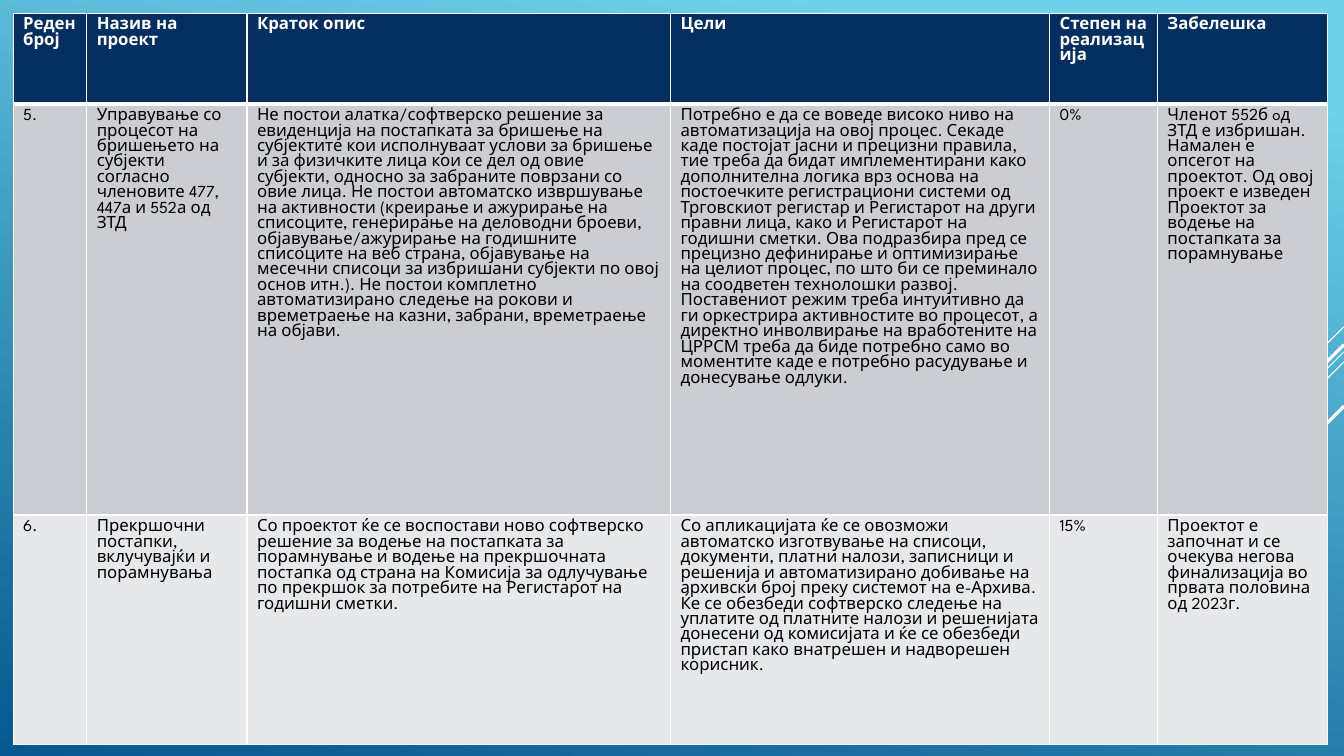
import pptx
import pptx.util
import pptx.dml.color
import pptx.enum.shapes
import pptx.oxml
import pptx.oxml.ns
from dataclasses import dataclass
from lxml import etree


@dataclass(frozen=True)
class Theme:
    font: str = "League Spartan"
    size: int = 12
    white: str = "FFFFFF"
    black: str = "000000"
    header: str = "052F61"
    bands: tuple = ("CCCDD2", "E7E8EA")
    sky: tuple = ((0.1, "6ED2EB"), (1.0, "06588E"))
    sky_angle: int = 258
    border: float = 1
    header_border: float = 3


THEME = Theme()
WIDTH = pptx.util.Inches(13.33)
HEIGHT = pptx.util.Inches(7.5)
GRID_COLUMNS, GRID_ROWS = 1333, 750

TABLE_LEFT, TABLE_TOP = 13, 13
TABLE_COLUMNS = (73, 159, 420, 376, 107, 169)
TABLE_ROWS = (90, 408, 228)

DIAGONALS = (
    (324, 100, 0.75),
    (349, 326, 0.75),
    (359, 207, 0.75),
    (342, 191, 2.25),
    (403, 139, 2.25),
)

HEADINGS = ("Реден број", "Назив на проект", "Краток опис", "Цели",
            "Степен на реализација", "Забелешка")

PROJECTS = (
    (
        "5.",
        "Управување со процесот на бришењето на субјекти согласно членовите 477, 447а и 552а од ЗТД",
        "Не постои алатка/софтверско решение за евиденција на постапката за бришење на субјектите "
        "кои исполнуваат услови за бришење и за физичките лица кои се дел од овие субјекти, односно "
        "за забраните поврзани со овие лица. Не постои автоматско извршување на активности (креирање "
        "и ажурирање на списоците, генерирање на деловодни броеви, објавување/ажурирање на годишните "
        "списоците на веб страна, објавување на месечни списоци за избришани субјекти по овој основ "
        "итн.). Не постои комплетно автоматизирано следење на рокови и времетраење на казни, забрани, "
        "времетраење на објави.",
        "Потребно е да се воведе високо ниво на автоматизација на овој процес. Секаде каде постојат "
        "јасни и прецизни правила, тие треба да бидат имплементирани како дополнителна логика врз "
        "основа на постоечките регистрациони системи од Трговскиот регистар и Регистарот на други "
        "правни лица, како и Регистарот на годишни сметки. Ова подразбира пред се прецизно дефинирање "
        "и оптимизирање на целиот процес, по што би се преминало на соодветен технолошки развој. "
        "Поставениот режим треба интуитивно да ги оркестрира активностите во процесот, а директно "
        "инволвирање на вработените на ЦРРСМ треба да биде потребно само во моментите каде е потребно "
        "расудување и донесување одлуки.",
        "0%",
        "Членот 552б oд ЗТД е избришан. Намален е опсегот на проектот. Од овој проект е изведен "
        "Проектот за водење на постапката за порамнување",
    ),
    (
        "6.",
        "Прекршочни постапки, вклучувајќи и порамнувања",
        "Со проектот ќе се воспостави ново софтверско решение за водење на постапката за порамнување "
        "и водење на прекршочната постапка од страна на Комисија за одлучување по прекршок за "
        "потребите на Регистарот на годишни сметки.",
        "Со апликацијата ќе се овозможи автоматско изготвување на списоци, документи, платни налози, "
        "записници и решенија и автоматизирано добивање на архивски број преку системот на е-Архива. "
        "Ќе се обезбеди софтверско следење на уплатите од платните налози и решенијата донесени од "
        "комисијата и ќе се обезбеди пристап како внатрешен и надворешен корисник.",
        "15%",
        "Проектот е започнат и се очекува негова финализација во првата половина од 2023г.",
    ),
)


def columns(count):
    return round(WIDTH * count / GRID_COLUMNS)


def rows(count):
    return round(HEIGHT * count / GRID_ROWS)


def color(value):
    return pptx.dml.color.RGBColor.from_string(value)


def paint_background(page):
    fill = page.background.fill
    fill.gradient()
    fill.gradient_angle = THEME.sky_angle
    for stop, (position, shade) in zip(fill.gradient_stops, THEME.sky):
        stop.position = position
        stop.color.rgb = color(shade)


def add_diagonal(page, top, reach, weight):
    line = page.shapes.add_connector(
        pptx.enum.shapes.MSO_CONNECTOR.STRAIGHT,
        WIDTH, rows(top), columns(GRID_COLUMNS - reach), rows(top + reach))
    line.line.color.rgb = color(THEME.white)
    line.line.width = pptx.util.Pt(weight)
    etree.SubElement(line._element.spPr, pptx.oxml.ns.qn("a:effectLst"))


def add_border(cell, side, weight):
    properties = cell._tc.get_or_add_tcPr()
    edge = etree.SubElement(properties, pptx.oxml.ns.qn(f"a:ln{side}"),
                            w=str(pptx.util.Pt(weight)))
    solid = etree.SubElement(edge, pptx.oxml.ns.qn("a:solidFill"))
    etree.SubElement(solid, pptx.oxml.ns.qn("a:srgbClr"), val=THEME.white)


def fill_cell(cell, text, shade, ink, bold, edges):
    for side, weight in edges.items():
        add_border(cell, side, weight)
    cell.fill.solid()
    cell.fill.fore_color.rgb = color(shade)
    cell.text = text
    font = cell.text_frame.paragraphs[0].font
    font.name = THEME.font
    font.size = pptx.util.Pt(THEME.size)
    font.bold = bold
    font.color.rgb = color(ink)


def add_project_table(page):
    table = page.shapes.add_table(
        len(TABLE_ROWS), len(TABLE_COLUMNS), columns(TABLE_LEFT), rows(TABLE_TOP),
        columns(sum(TABLE_COLUMNS)), rows(sum(TABLE_ROWS))).table
    for column, width in zip(table.columns, TABLE_COLUMNS):
        column.width = columns(width)
    shades = (THEME.header, *THEME.bands)
    for index, texts in enumerate((HEADINGS, *PROJECTS)):
        table.rows[index].height = rows(TABLE_ROWS[index])
        heading = index == 0
        edges = dict.fromkeys("LRTB", THEME.border)
        if heading:
            edges["B"] = THEME.header_border
        elif index == 1:
            edges["T"] = THEME.header_border
        ink = THEME.white if heading else THEME.black
        for cell, text in zip(table.rows[index].cells, texts):
            fill_cell(cell, text, shades[index], ink, heading, edges)


def main():
    deck = pptx.Presentation()
    deck.slide_width, deck.slide_height = WIDTH, HEIGHT
    page = deck.slides.add_slide(deck.slide_layouts[6])
    paint_background(page)
    for diagonal in DIAGONALS:
        add_diagonal(page, *diagonal)
    add_project_table(page)
    deck.save("out.pptx")


if __name__ == "__main__":
    main()
